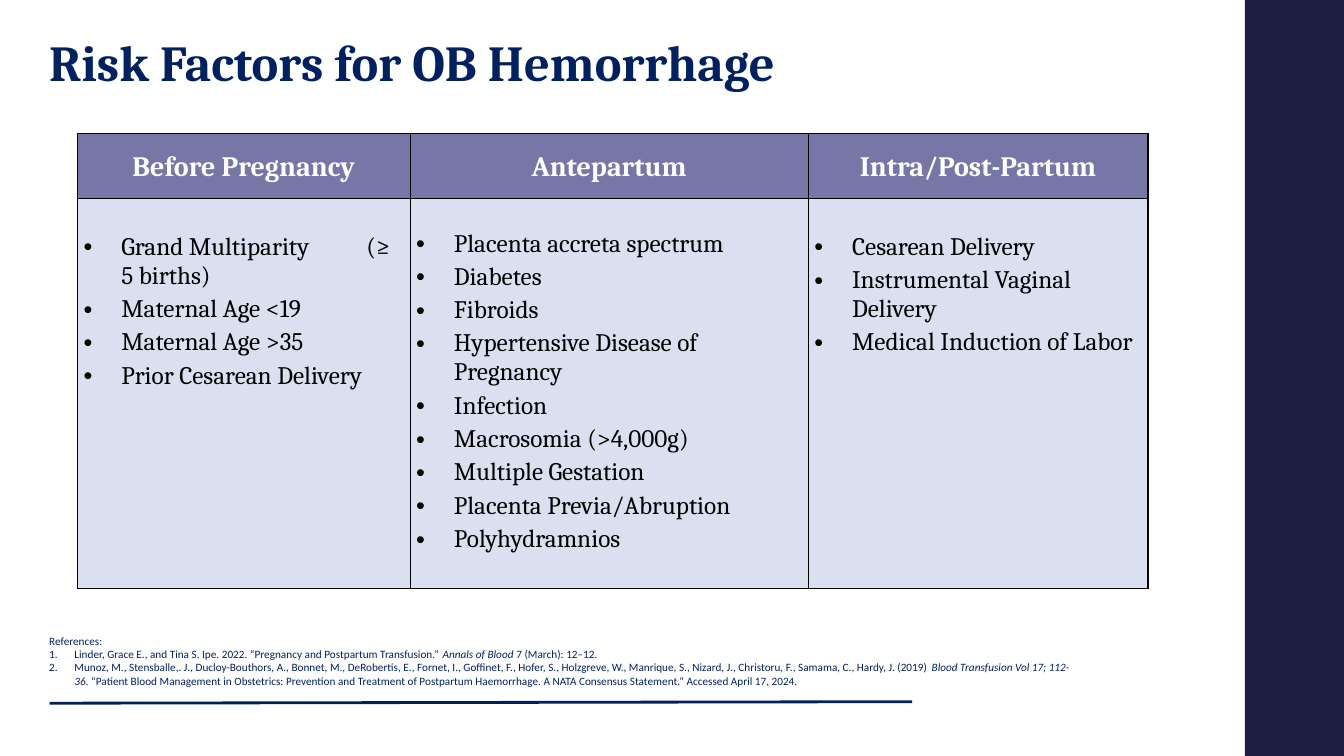
"""Build the slide on risk factors for obstetric hemorrhage."""
from dataclasses import dataclass

from lxml import etree
from pptx import Presentation
from pptx import util as u
from pptx.dml.color import RGBColor
from pptx.enum import shapes, text
from pptx.oxml import ns

NAVY, DARK, WHITE, BLACK = "002060", "1B1E3E", "FFFFFF", "000000"
HEADER, BODY = "7677A6", "DAE0EF"


@dataclass
class Column:
    title: str
    width: float
    top: float
    items: list[str]


@dataclass
class Reference:
    before: str
    title: str
    after: str


COLUMNS = [
    Column("Before Pregnancy", 237.6, 24.5, [
        "Grand Multiparity\t(≥ 5 births)", "Maternal Age <19",
        "Maternal Age >35", "Prior Cesarean Delivery"]),
    Column("Antepartum", 284.4, 22.2, [
        "Placenta accreta spectrum", "Diabetes", "Fibroids",
        "Hypertensive Disease of Pregnancy", "Infection",
        "Macrosomia (>4,000g)", "Multiple Gestation",
        "Placenta Previa/Abruption", "Polyhydramnios"]),
    Column("Intra/Post-Partum", 242.6, 24.5, [
        "Cesarean Delivery", "Instrumental Vaginal Delivery",
        "Medical Induction of Labor"]),
]
REFERENCES = [
    Reference("Linder, Grace E., and Tina S. Ipe. 2022. “Pregnancy and "
              "Postpartum Transfusion.” ", "Annals of Blood",
              " 7 (March): 12–12."),
    Reference("Munoz, M., Stensballe,. J., Ducloy-Bouthors, A., Bonnet, M., "
              "DeRobertis, E., Fornet, I., Goffinet, F., Hofer, S., "
              "Holzgreve, W., Manrique, S., Nizard, J., Christoru, F., "
              "Samama, C., Hardy, J. (2019) ",
              "Blood Transfusion Vol 17; 112-36.",
              " “Patient Blood Management in Obstetrics: Prevention and "
              "Treatment of Postpartum Haemorrhage. A NATA Consensus "
              "Statement.” Accessed April 17, 2024."),
]


def rgb(color: str) -> RGBColor:
    return RGBColor.from_string(color)


def add_xml(parent, tag: str, **attrs: str):
    return etree.SubElement(parent, ns.qn(tag), attrs)


def add_run(p, content: str, *, size: float, font: str = "Cambria",
            color: str = NAVY, bold: bool = False,
            italic: bool = False) -> None:
    r = p.add_run()
    r.text = content
    r.font.size, r.font.name = u.Pt(size), font
    r.font.bold, r.font.italic = bold, italic
    r.font.color.rgb = rgb(color)


def add_bullet(p, indent: float, tag: str, **attrs: str) -> None:
    pPr = p._p.get_or_add_pPr()
    pPr.set("marL", str(u.Pt(indent)))
    pPr.set("indent", str(-u.Pt(indent)))
    add_xml(pPr, "a:buFont", typeface="Arial" if tag == "a:buChar" else "+mj-lt")
    add_xml(pPr, tag, **attrs)


def add_tab(p, position: float) -> None:
    tabs = add_xml(p._p.get_or_add_pPr(), "a:tabLst")
    add_xml(tabs, "a:tab", pos=str(u.Pt(position)), algn="l")


def add_box(s, left: float, top: float, width: float, height: float):
    sp = s.shapes.add_textbox(u.Pt(left), u.Pt(top), u.Pt(width), u.Pt(height))
    sp.text_frame.word_wrap = True
    return sp.text_frame


def style_cell(cell, fill: str, top: float) -> None:
    cell.margin_left = cell.margin_right = u.Pt(4.3)
    cell.margin_top, cell.margin_bottom = u.Pt(top), u.Pt(0)
    tcPr = cell._tc.get_or_add_tcPr()
    for side in ("a:lnL", "a:lnR", "a:lnT", "a:lnB"):
        ln = add_xml(tcPr, side, w=str(u.Pt(1)))
        add_xml(add_xml(ln, "a:solidFill"), "a:srgbClr", val=BLACK)
    cell.fill.solid()
    cell.fill.fore_color.rgb = rgb(fill)


def add_risk_table(s) -> None:
    width = sum(c.width for c in COLUMNS)
    table = s.shapes.add_table(2, len(COLUMNS), u.Pt(55.4), u.Pt(95.5),
                               u.Pt(width), u.Pt(324.8)).table
    table.rows[0].height, table.rows[1].height = u.Pt(46.1), u.Pt(278.7)
    for i, column in enumerate(COLUMNS):
        table.columns[i].width = u.Pt(column.width)
        head, body = table.cell(0, i), table.cell(1, i)
        style_cell(head, HEADER, 0.7)
        head.vertical_anchor = text.MSO_ANCHOR.MIDDLE
        p = head.text_frame.paragraphs[0]
        p.alignment, p.line_spacing = text.PP_ALIGN.CENTER, 1.06
        add_run(p, column.title, size=20, color=WHITE, bold=True)
        style_cell(body, BODY, column.top)
        tf = body.text_frame
        for n, item in enumerate(column.items):
            p = tf.add_paragraph() if n else tf.paragraphs[0]
            add_bullet(p, 27, "a:buChar", char="•")
            if "\t" in item:
                add_tab(p, 202)
            if n:
                p.space_before = u.Pt(3)
            add_run(p, item, size=18, color=BLACK)


def add_references(s) -> None:
    tf = add_box(s, 28.1, 449.3, 746, 46)
    add_run(tf.paragraphs[0], "References:", size=8, font="Calibri")
    for ref in REFERENCES:
        p = tf.add_paragraph()
        add_bullet(p, 18, "a:buAutoNum", type="arabicPeriod")
        for part in (ref.before, ref.title, ref.after):
            add_run(p, part, size=8, font="Calibri", italic=part == ref.title)


def add_frame(s) -> None:
    sp = s.shapes.add_shape(shapes.MSO_SHAPE.RECTANGLE, u.Pt(889.2), u.Pt(0),
                            u.Pt(70.8), u.Pt(540))
    sp.shadow.inherit = False
    sp.fill.solid()
    sp.fill.fore_color.rgb = rgb(DARK)
    sp.line.fill.background()
    rule = s.shapes.add_connector(shapes.MSO_CONNECTOR.STRAIGHT, u.Pt(35.4),
                                  u.Pt(502.3), u.Pt(651.6), u.Pt(501.2))
    rule.line.color.rgb, rule.line.width = rgb(NAVY), u.Pt(2)
    add_xml(rule._element.spPr, "a:effectLst")


def main() -> None:
    prs = Presentation()
    prs.slide_width, prs.slide_height = u.Pt(960), u.Pt(540)
    s = prs.slides.add_slide(prs.slide_layouts[6])
    add_frame(s)
    tf = add_box(s, 28.1, 18.7, 730.8, 51)
    add_run(tf.paragraphs[0], "Risk Factors for OB Hemorrhage", size=36,
            bold=True)
    add_references(s)
    add_risk_table(s)
    prs.save("out.pptx")


if __name__ == "__main__":
    main()
